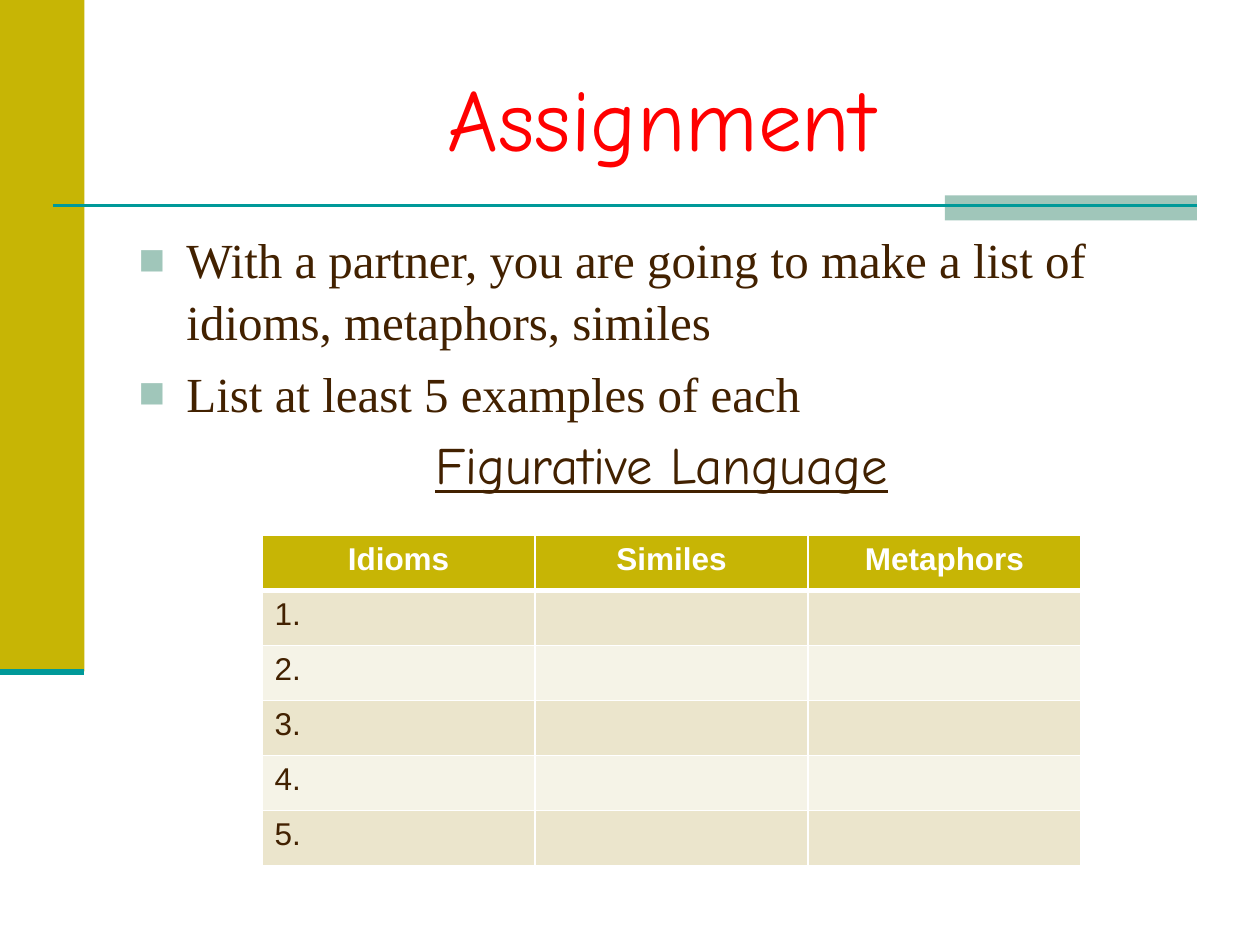
from lxml.etree import SubElement
from pptx import Presentation
from pptx.dml.color import RGBColor
from pptx.enum.shapes import MSO_CONNECTOR, MSO_SHAPE
from pptx.enum.text import MSO_ANCHOR, MSO_AUTO_SIZE, PP_ALIGN
from pptx.oxml.ns import qn
from pptx.util import Inches, Pt

OLIVE = RGBColor(0xC7, 0xB5, 0x05)
SAGE = RGBColor(0xA0, 0xC6, 0xBA)
TEAL = RGBColor(0x00, 0x99, 0x99)
RED = RGBColor(0xFF, 0x00, 0x00)
BROWN = RGBColor(0x42, 0x21, 0x00)
WHITE = RGBColor(0xFF, 0xFF, 0xFF)
DARK_BAND = RGBColor(0xEB, 0xE5, 0xCC)
LIGHT_BAND = RGBColor(0xF5, 0xF3, 0xE7)


class SlideBuilder:
    display_font = "Comic Neue"
    body_font = "Times New Roman"
    table_font = "Arial"

    def __init__(self, slide):
        self.slide = slide

    def bar(self, left, top, width, height, color):
        shape = self.slide.shapes.add_shape(
            MSO_SHAPE.RECTANGLE, Inches(left), Inches(top), Inches(width), Inches(height))
        shape.shadow.inherit = False
        shape.fill.solid()
        shape.fill.fore_color.rgb = color
        shape.line.fill.background()

    def rule(self, left, right, top, weight):
        line = self.slide.shapes.add_connector(
            MSO_CONNECTOR.STRAIGHT, Inches(left), Inches(top), Inches(right), Inches(top))
        line.line.color.rgb = TEAL
        line.line.width = Pt(weight)
        SubElement(line._element.spPr, qn("a:effectLst"))

    def run(self, paragraph, text, font_name, size, color, bold=False, underline=False):
        run = paragraph.add_run()
        run.text = text
        font = run.font
        font.name, font.size, font.bold, font.underline = font_name, Pt(size), bold, underline
        font.color.rgb = color

    def place(self, placeholder, left, top, width, height, anchor):
        placeholder.left, placeholder.top = Inches(left), Inches(top)
        placeholder.width, placeholder.height = Inches(width), Inches(height)
        frame = placeholder.text_frame
        frame.word_wrap = True
        frame.auto_size = MSO_AUTO_SIZE.NONE
        frame.vertical_anchor = anchor
        return frame

    def title(self, text):
        frame = self.place(self.slide.shapes.title, 1, 0.3, 8.5, 1.25, MSO_ANCHOR.MIDDLE)
        paragraph = frame.paragraphs[0]
        paragraph.alignment = PP_ALIGN.CENTER
        self.run(paragraph, text, self.display_font, 50, RED)

    def bullet(self, paragraph):
        properties = paragraph._p.get_or_add_pPr()
        properties.set("marL", str(Inches(0.38)))
        properties.set("indent", str(-Inches(0.38)))
        color = SubElement(properties, qn("a:buClr"))
        SubElement(color, qn("a:srgbClr"), val=str(SAGE))
        SubElement(properties, qn("a:buSzPct"), val="90000")
        SubElement(properties, qn("a:buFont"), typeface="Arial")
        SubElement(properties, qn("a:buChar"), char="■")

    def body(self, items, heading):
        frame = self.place(self.slide.placeholders[1], 1, 1.75, 8.5, 5.75, MSO_ANCHOR.TOP)
        for index, text in enumerate(items):
            paragraph = frame.add_paragraph() if index else frame.paragraphs[0]
            self.bullet(paragraph)
            paragraph.line_spacing = 1.05
            paragraph.space_before = Pt(5.6 if index else 0)
            self.run(paragraph, text, self.body_font, 28, BROWN)
        paragraph = frame.add_paragraph()
        properties = paragraph._p.get_or_add_pPr()
        properties.set("marL", str(Inches(0.38)))
        properties.set("indent", str(-Inches(0.38)))
        SubElement(properties, qn("a:buNone"))
        paragraph.alignment = PP_ALIGN.CENTER
        paragraph.space_before = Pt(6)
        self.run(paragraph, heading, self.display_font, 30, BROWN, underline=True)

    def borders(self, cell, weights):
        properties = cell._tc.get_or_add_tcPr()
        for position, (side, weight) in enumerate(weights.items()):
            line = properties.makeelement(qn(f"a:ln{side}"), {"w": str(Pt(weight))})
            fill = SubElement(line, qn("a:solidFill"))
            SubElement(fill, qn("a:srgbClr"), val=str(WHITE))
            properties.insert(position, line)

    def table(self, headers, row_count):
        table = self.slide.shapes.add_table(
            row_count + 1, len(headers), Inches(2.08), Inches(4.25),
            Inches(6.5), Inches(2.62)).table
        for row_index, row in enumerate(table.rows):
            for column_index, cell in enumerate(row.cells):
                is_header = row_index == 0
                cell.fill.solid()
                cell.fill.fore_color.rgb = (
                    OLIVE if is_header else DARK_BAND if row_index % 2 else LIGHT_BAND)
                self.borders(cell, {"L": 1, "R": 1, "T": 3 if row_index == 1 else 1,
                                    "B": 3 if is_header else 1})
                paragraph = cell.text_frame.paragraphs[0]
                if is_header:
                    paragraph.alignment = PP_ALIGN.CENTER
                    self.run(paragraph, headers[column_index], self.table_font, 18, WHITE, bold=True)
                elif column_index == 0:
                    self.run(paragraph, f"{row_index}.", self.table_font, 18, BROWN)


def main():
    presentation = Presentation()
    presentation.slide_width, presentation.slide_height = Inches(10), Inches(7.5)
    builder = SlideBuilder(presentation.slides.add_slide(presentation.slide_layouts[1]))
    builder.bar(0, 0, 0.67, 5.33, OLIVE)
    builder.bar(7.5, 1.55, 2, 0.2, SAGE)
    builder.rule(0.42, 9.5, 1.63, 1.5)
    builder.rule(0, 0.67, 5.33, 3.5)
    builder.title("Assignment")
    builder.body(["With a partner, you are going to make a list of idioms, metaphors, similes",
                  "List at least 5 examples of each"], "Figurative Language")
    builder.table(["Idioms", "Similes", "Metaphors"], 5)
    presentation.save("out.pptx")


if __name__ == "__main__":
    main()
